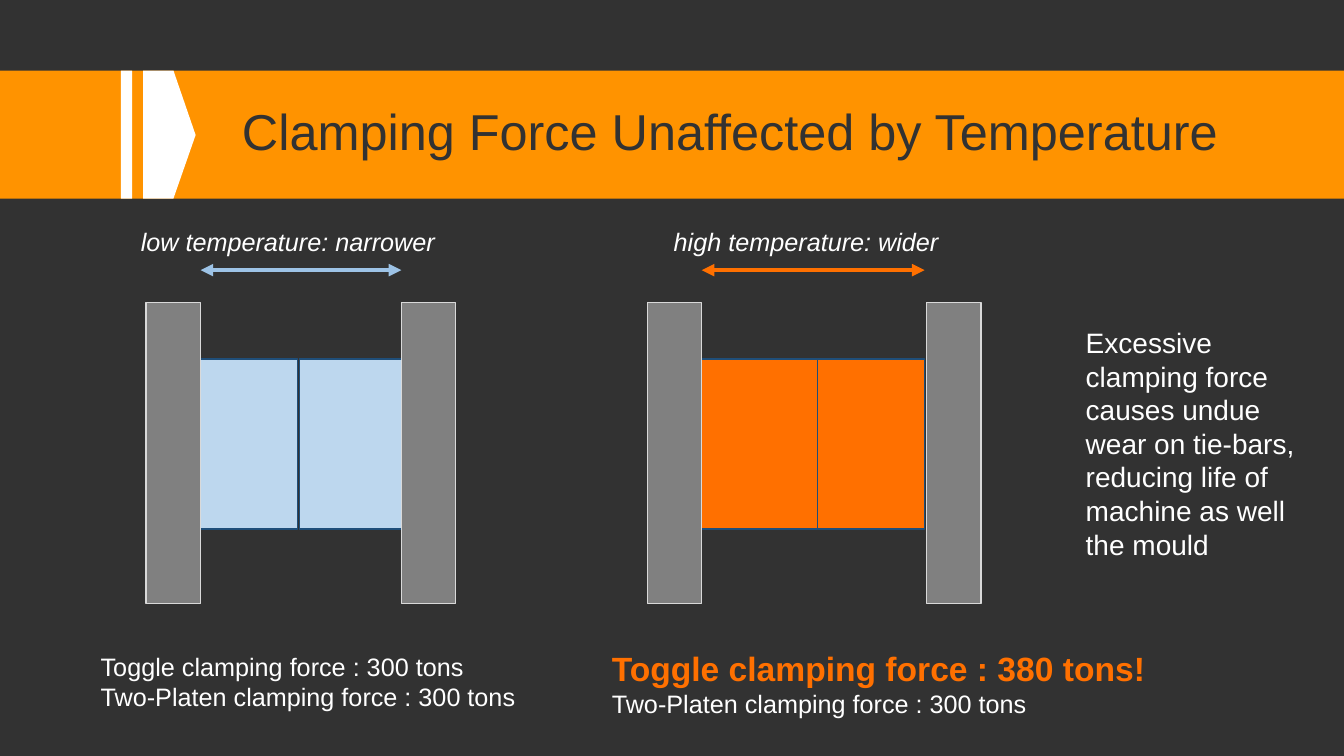
from pptx import Presentation
from pptx.dml.color import RGBColor
from pptx.enum import shapes, text
from pptx.oxml import ns
from pptx.util import Pt
from lxml import etree

PX = 9144  # one px is a hundredth of an inch
DARK, WHITE, AMBER, ORANGE = "323232", "FFFFFF", "FF9300", "FF7000"
GREY, PALE_GREY = "808080", "D9D9D9"
PALE_BLUE, MID_BLUE, NAVY = "BDD7EE", "9DC3E6", "1F4E79"


def px(*lengths):
    return [length * PX for length in lengths]


def color(value):
    return RGBColor.from_string(value)


def add_text(paragraph, content, size=18, fill=WHITE, bold=False, italic=False,
             align=text.PP_ALIGN.LEFT):
    paragraph.alignment = align
    run = paragraph.add_run()
    run.text = content
    run.font.name = "Arial"
    run.font.size = Pt(size)
    run.font.bold = bold
    run.font.italic = italic
    run.font.color.rgb = color(fill)


def add_text_box(slide, box, lines, wrap=True):
    """Each line is a pair: its text and its format."""
    frame = slide.shapes.add_textbox(*px(*box)).text_frame
    frame.word_wrap = wrap
    for index, (content, style) in enumerate(lines):
        paragraph = frame.add_paragraph() if index else frame.paragraphs[0]
        add_text(paragraph, content, **style)


def paint(shape, fill, line=None):
    shape.shadow.inherit = False
    shape.fill.solid()
    shape.fill.fore_color.rgb = color(fill)
    if line:
        shape.line.color.rgb = color(line)
        shape.line.width = Pt(1)
    else:
        shape.line.fill.background()


def add_rectangle(slide, box, fill, line=None):
    shape = slide.shapes.add_shape(shapes.MSO_SHAPE.RECTANGLE, *px(*box))
    paint(shape, fill, line)


def add_double_arrow(slide, left, right, y, fill):
    arrow = slide.shapes.add_connector(
        shapes.MSO_CONNECTOR.STRAIGHT, *px(left, y, right, y))
    arrow.line.color.rgb = color(fill)
    arrow.line.width = Pt(3)
    line = arrow.line._get_or_add_ln()
    for end in ("a:headEnd", "a:tailEnd"):
        etree.SubElement(line, ns.qn(end), type="triangle")
    etree.SubElement(arrow._element.spPr, ns.qn("a:effectLst"))


def add_title_band(slide, left, top, width, height, title):
    add_rectangle(slide, (left, top, width, height), AMBER)
    # White stripe and pointed tab
    add_rectangle(slide, (left + 120, top, 11, height), WHITE)
    tab, shoulder, tip = left + 142, left + 172, left + 194
    bottom = top + height
    builder = slide.shapes.build_freeform(tab, top, scale=PX)
    builder.add_line_segments([(shoulder, top), (tip, top + height / 2),
                               (shoulder, bottom), (tab, bottom)])
    paint(builder.convert_to_shape(), WHITE)
    # Title, brought in front of the band
    holder = slide.shapes.title
    slide.shapes._spTree.append(holder._element)
    holder.left, holder.top, holder.width, holder.height = px(
        left + 230, top, 1012, height)
    frame = holder.text_frame
    frame.word_wrap = True
    frame.auto_size = text.MSO_AUTO_SIZE.NONE
    frame.vertical_anchor = text.MSO_ANCHOR.MIDDLE
    frame.paragraphs[0].line_spacing = 0.9
    add_text(frame.paragraphs[0], title, size=36, fill=DARK)


def add_clamp(slide, left, top, halves, joint, slack, fill, arrow_fill,
              label, label_left, label_width):
    """Two mould halves between two platens, with the span marked above."""
    platen_width, platen_height = 54, 299
    mould_left = left + platen_width
    second_left = mould_left + halves[0] + joint
    mould_right = second_left + halves[1]
    # Mould halves
    for half_left, width in zip((mould_left, second_left), halves):
        add_rectangle(slide, (half_left, top + 56, width, 169), fill, NAVY)
    # Platens
    for platen_left in (left, mould_right + slack):
        add_rectangle(slide, (platen_left, top, platen_width, platen_height),
                      GREY, PALE_GREY)
    # Span and its label
    add_double_arrow(slide, mould_left, mould_right, top - 32, arrow_fill)
    add_text_box(slide, (left + label_left, top - 80, label_width, 40),
                 [(label, dict(italic=True, align=text.PP_ALIGN.CENTER))],
                 wrap=False)


def main():
    presentation = Presentation()
    presentation.slide_width, presentation.slide_height = px(1333, 750)
    slide = presentation.slides.add_slide(presentation.slide_layouts[5])
    slide.background.fill.solid()
    slide.background.fill.fore_color.rgb = color(DARK)

    add_title_band(slide, 0, 70, 1333, 127,
                   "Clamping Force Unaffected by Temperature")

    # Cold and hot moulds
    add_clamp(slide, 145, 300, (96, 101), 2, 0, PALE_BLUE, MID_BLUE,
              "low temperature: narrower", -17, 315)
    add_clamp(slide, 642, 300, (115, 106), 0, 2, ORANGE, ORANGE,
              "high temperature: wider", 15, 285)

    # Clamping forces
    two_platen = ("Two-Platen clamping force : 300 tons", {})
    add_text_box(slide, (90, 641, 452, 71),
                 [("Toggle clamping force : 300 tons", {}), two_platen])
    add_text_box(slide, (597, 638, 603, 81),
                 [("Toggle clamping force : 380 tons!",
                   dict(size=24, fill=ORANGE, bold=True)), two_platen])

    # Consequence
    add_text_box(slide, (1067, 318, 244, 246),
                 [("Excessive clamping force causes undue wear on tie-bars, "
                   "reducing life of machine as well the mould",
                   dict(size=20))])

    presentation.save("out.pptx")


if __name__ == "__main__":
    main()
